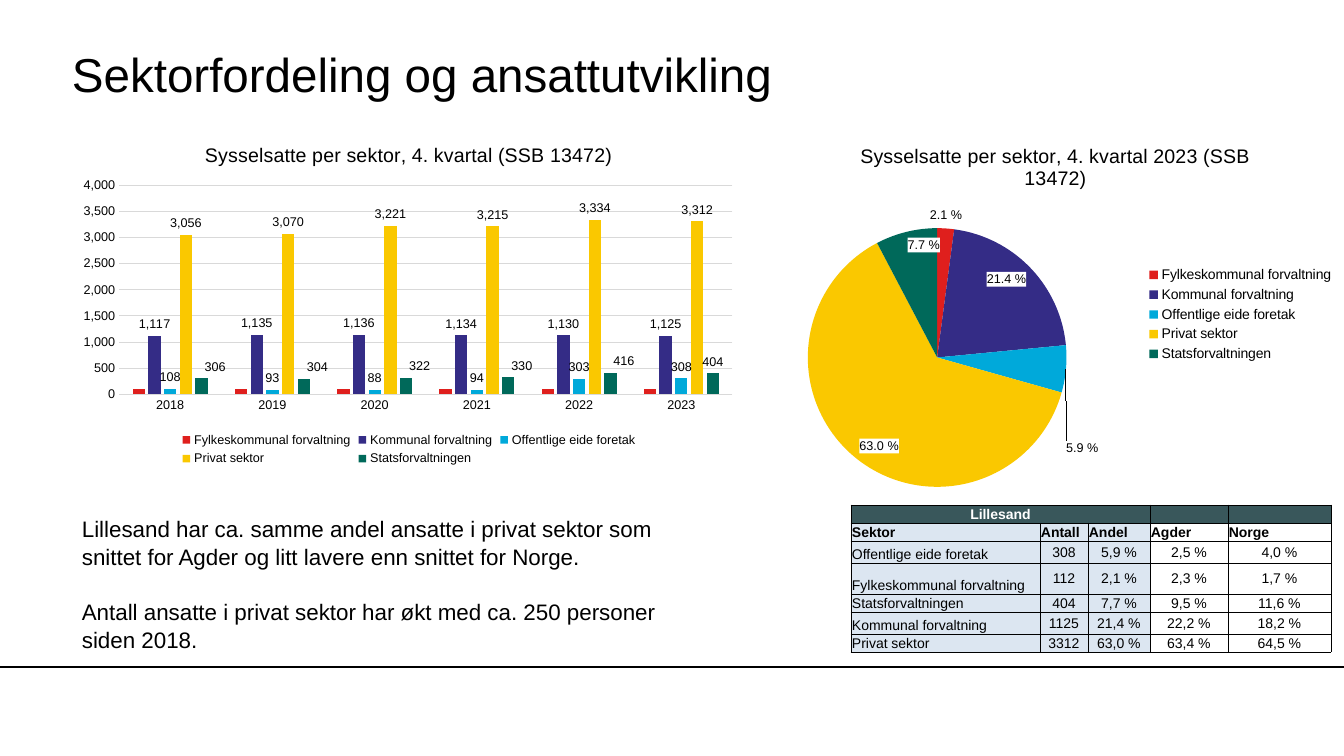
from pptx import Presentation
from pptx.chart.data import CategoryChartData
from pptx.dml.color import RGBColor
from pptx.enum.chart import (XL_CHART_TYPE, XL_LABEL_POSITION,
                             XL_LEGEND_POSITION, XL_TICK_MARK)
from pptx.enum.shapes import MSO_CONNECTOR
from pptx.enum.text import MSO_ANCHOR, PP_ALIGN
from pptx.oxml.xmlchemy import OxmlElement
from pptx.util import Emu, Pt

COLUMN, PIE = XL_CHART_TYPE.COLUMN_CLUSTERED, XL_CHART_TYPE.PIE
OUT, IN = XL_LABEL_POSITION.OUTSIDE_END, XL_LABEL_POSITION.INSIDE_END
BELOW, RIGHT = XL_LEGEND_POSITION.BOTTOM, XL_LEGEND_POSITION.RIGHT
NO_TICK = XL_TICK_MARK.NONE
MID, LOW = MSO_ANCHOR.MIDDLE, MSO_ANCHOR.BOTTOM
LEFT, MIDST = PP_ALIGN.LEFT, PP_ALIGN.CENTER
BLACK, WHITE, GREY = "000000", "FFFFFF", "D9D9D9"
DARK, PALE = "39575B", "DCE6F1"

YEARS = ["2018", "2019", "2020", "2021", "2022", "2023"]
SECTORS = [
    ("Fylkeskommunal forvaltning", "DF1F1D", [100] * 6, 2.1),
    ("Kommunal forvaltning", "342C86",
     [1117, 1135, 1136, 1134, 1130, 1125], 21.4),
    ("Offentlige eide foretak", "00A9DA", [108, 93, 88, 94, 303, 308], 5.9),
    ("Privat sektor", "FAC800", [3056, 3070, 3221, 3215, 3334, 3312], 63),
    ("Statsforvaltningen", "00695A", [306, 304, 322, 330, 416, 404], 7.7),
]
ROWS = [
    ["Lillesand", "", "", "", ""],
    ["Sektor", "Antall", "Andel", "Agder", "Norge"],
    ["Offentlige eide foretak", "308", "5,9 %", "2,5 %", "4,0 %"],
    ["Fylkeskommunal forvaltning", "112", "2,1 %", "2,3 %", "1,7 %"],
    ["Statsforvaltningen", "404", "7,7 %", "9,5 %", "11,6 %"],
    ["Kommunal forvaltning", "1125", "21,4 %", "22,2 %", "18,2 %"],
    ["Privat sektor", "3312", "63,0 %", "63,4 %", "64,5 %"],
]
WIDTHS, HEIGHTS = [189, 48, 62, 78, 103], [18, 18, 22, 31, 18, 22, 18]
NOTES = [
    "Lillesand har ca. samme andel ansatte i privat sektor som snittet "
    "for Agder og litt lavere enn snittet for Norge.",
    "Antall ansatte i privat sektor har økt med ca. 250 personer siden 2018.",
]


def px(*nums):
    sizes = [Emu(round(n * 914400 / 100.8)) for n in nums]
    return sizes if len(sizes) > 1 else sizes[0]


def color(code):
    return RGBColor.from_string(code)


def style(font, size, code=BLACK, bold=False):
    font.name, font.size, font.bold = "Arial", Pt(size), bold
    font.color.rgb = color(code)


def paint(fill, code):
    fill.solid()
    fill.fore_color.rgb = color(code)


def node(tag, *kids, **attrs):
    item = OxmlElement(tag)
    for key, val in attrs.items():
        item.set(key, str(val))
    item.extend(kids)
    return item


def solid(code):
    return node("a:solidFill", node("a:srgbClr", val=code))


def layout(**parts):
    spots = [node(f"c:{key}", val=val) for key, val in parts.items()]
    return node("c:layout", node("c:manualLayout", *spots))


def add_title(slide, box):
    title = slide.shapes.title
    title.left, title.top, title.width, title.height = px(*box)
    frame = title.text_frame
    frame.text = "Sektorfordeling og ansattutvikling"
    frame.margin_left = frame.margin_right = 0
    frame.margin_top = frame.margin_bottom = 0
    frame.vertical_anchor = MID
    frame.paragraphs[0].alignment = LEFT
    style(frame.paragraphs[0].runs[0].font, 34)


def add_notes(slide, box):
    frame = slide.shapes.add_textbox(*px(*box)).text_frame
    frame.word_wrap = True
    frame.text = "\n".join(NOTES)
    for i, para in enumerate(frame.paragraphs):
        para.line_spacing = 1.05
        if i:
            para.space_before = Pt(19)
        style(para.runs[0].font, 16)


def add_rule(slide, y, width):
    rule = slide.shapes.add_connector(MSO_CONNECTOR.STRAIGHT,
                                      *px(0, y, width, y))
    rule.line.color.rgb = color(BLACK)
    rule.line.width = Pt(0.75)
    rule._element.spPr.append(node("a:effectLst"))


def add_chart(slide, box, kind, title, cats, series, legend, size, plot):
    data = CategoryChartData()
    data.categories = cats
    for name, vals in series:
        data.add_series(name, vals)
    chart = slide.shapes.add_chart(kind, *px(*box), data).chart
    style(chart.font, 10)
    chart.has_title = True
    chart.chart_title.include_in_layout = False
    frame = chart.chart_title.text_frame
    frame.text = title
    style(frame.paragraphs[0].runs[0].font, 14)
    chart.has_legend = True
    chart.legend.position = legend
    chart.legend.include_in_layout = False
    style(chart.legend.font, size)
    # Plot area as shares of the chart box
    area = chart._chartSpace.chart.plotArea
    for old in area.xpath("./c:layout"):
        area.remove(old)
    x, y, w, h = plot
    area.insert(0, layout(layoutTarget="inner", xMode="edge", yMode="edge",
                          x=x, y=y, w=w, h=h))
    return chart


def label(series, form, spot):
    labels = series.data_labels
    labels.show_value = True
    labels.number_format = form
    labels.number_format_is_linked = False
    labels.position = spot
    style(labels.font, 9)
    return labels


def shift(series, i, form, x, y):
    tag = series.points[i].data_label
    tag.position = OUT
    style(tag.font, 9)
    item = series._element.xpath(f".//c:dLbl[c:idx/@val='{i}']")[0]
    item.insert(1, layout(x=x, y=y))
    item.insert(2, node("c:numFmt", formatCode=form, sourceLinked=0))


def add_columns(slide, box):
    chart = add_chart(slide, box, COLUMN,
                      "Sysselsatte per sektor, 4. kvartal (SSB 13472)", YEARS,
                      [(name, vals) for name, _, vals, _ in SECTORS],
                      BELOW, 9, (0.07, 0.17, 0.91, 0.61))
    plot = chart.plots[0]
    plot.gap_width, plot.overlap = 219, -27
    plot.vary_by_categories = False
    cats, vals = chart.category_axis, chart.value_axis
    for axis in (cats, vals):
        axis.major_tick_mark = axis.minor_tick_mark = NO_TICK
        style(axis.tick_labels.font, 9)
    vals.tick_labels.number_format = "#,##0"
    vals.tick_labels.number_format_is_linked = False
    vals.minimum_scale, vals.maximum_scale, vals.major_unit = 0, 4000, 500
    vals.format.line.fill.background()
    for line in (cats.format.line, vals.major_gridlines.format.line):
        line.color.rgb = color(GREY)
        line.width = Pt(0.75)
    for i, series in enumerate(plot.series):
        paint(series.format.fill, SECTORS[i][1])
        series.invert_if_negative = False
        if i:
            label(series, "#,##0", OUT)
    for i in range(5):
        shift(plot.series[4], i, "#,##0", 0.02, 0)


def add_pie(slide, box):
    form = '0.0" %"'
    chart = add_chart(slide, box, PIE,
                      "Sysselsatte per sektor, 4. kvartal 2023 (SSB 13472)",
                      [row[0] for row in SECTORS],
                      [("Series 1", [row[3] for row in SECTORS])],
                      RIGHT, 10, (0.07, 0.27, 0.45, 0.69))
    series = chart.plots[0].series[0]
    for i, row in enumerate(SECTORS):
        paint(series.points[i].format.fill, row[1])
    labels = label(series, form, IN)
    text = labels._element.xpath("./c:txPr")[0]
    text.addprevious(node("c:spPr", solid(WHITE)))
    shift(series, 0, form, 0, 0)
    shift(series, 2, form, -0.01, 0.19)


def add_grid(slide, x, y):
    shape = slide.shapes.add_table(len(ROWS), len(WIDTHS), *px(
        x, y, sum(WIDTHS), sum(HEIGHTS)))
    table = shape.table
    table.first_row = table.horz_banding = False
    for col, width in zip(table.columns, WIDTHS):
        col.width = px(width)
    for row, height in zip(table.rows, HEIGHTS):
        row.height = px(height)
    for r, texts in enumerate(ROWS):
        for c, text in enumerate(texts):
            cell = table.cell(r, c)
            middle = r > 1 and c > 0
            cell.margin_left = cell.margin_right = cell.margin_top = px(1)
            cell.margin_bottom = 0
            cell.vertical_anchor = MID if middle else LOW
            para = cell.text_frame.paragraphs[0]
            para.alignment = MIDST if middle or r == 0 else LEFT
            if text:
                para.text = text
                style(para.runs[0].font, 10, BLACK if r else WHITE, r < 2)
            else:
                para._p.append(node("a:endParaRPr", sz=1000))
            if r == 0 or c < 3:
                paint(cell.fill, PALE if r else DARK)
            else:
                cell.fill.background()
            edges = cell._tc.get_or_add_tcPr()
            for i, side in enumerate("LRTB"):
                edges.insert(i, node(f"a:ln{side}", solid(BLACK), w=6350))
    table.cell(0, 0).merge(table.cell(0, 2))


def main():
    deck = Presentation()
    deck.slide_width, deck.slide_height = px(1344, 756)
    slide = deck.slides.add_slide(deck.slide_layouts[5])
    add_rule(slide, 667, 1344)
    add_title(slide, (72, 35, 1119, 76))
    add_notes(slide, (72, 509, 646, 146))
    add_grid(slide, 851, 505)
    add_columns(slide, (72, 127, 674, 343))
    add_pie(slide, (767, 127, 577, 375))
    deck.save("out.pptx")


if __name__ == "__main__":
    main()
